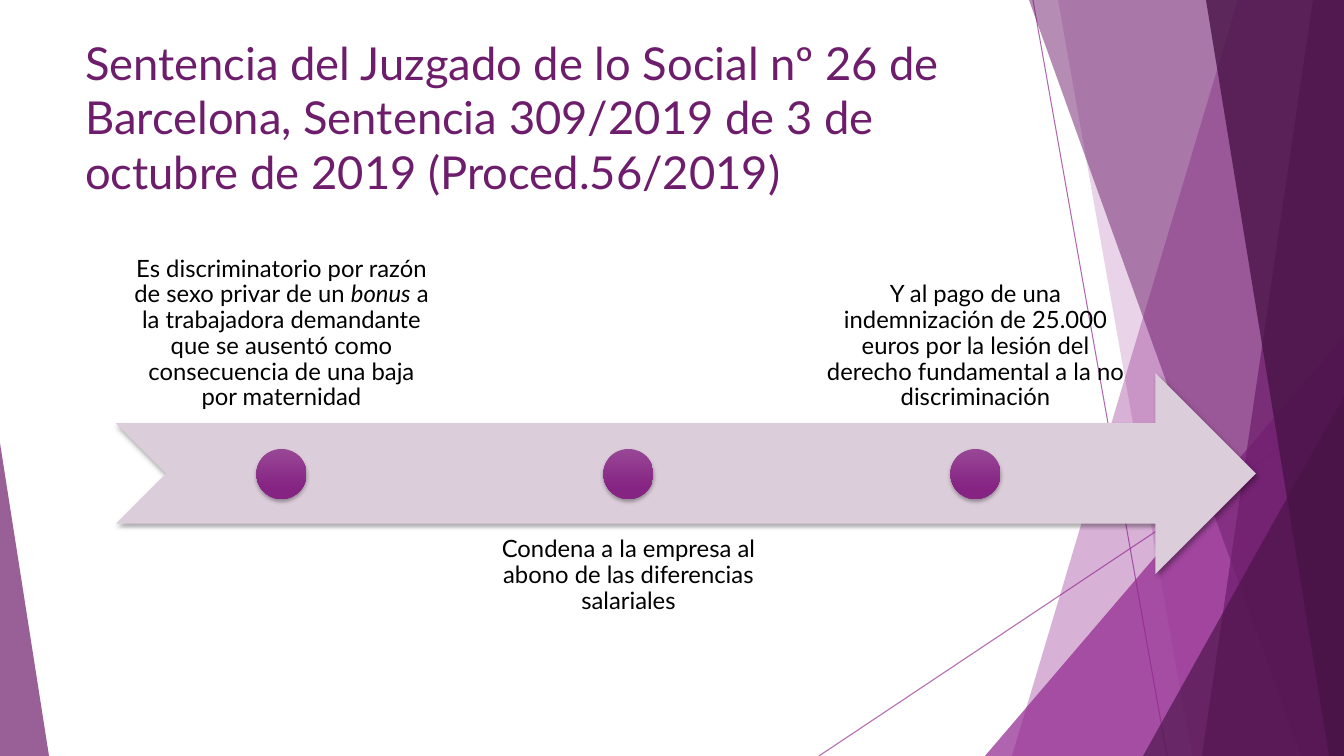
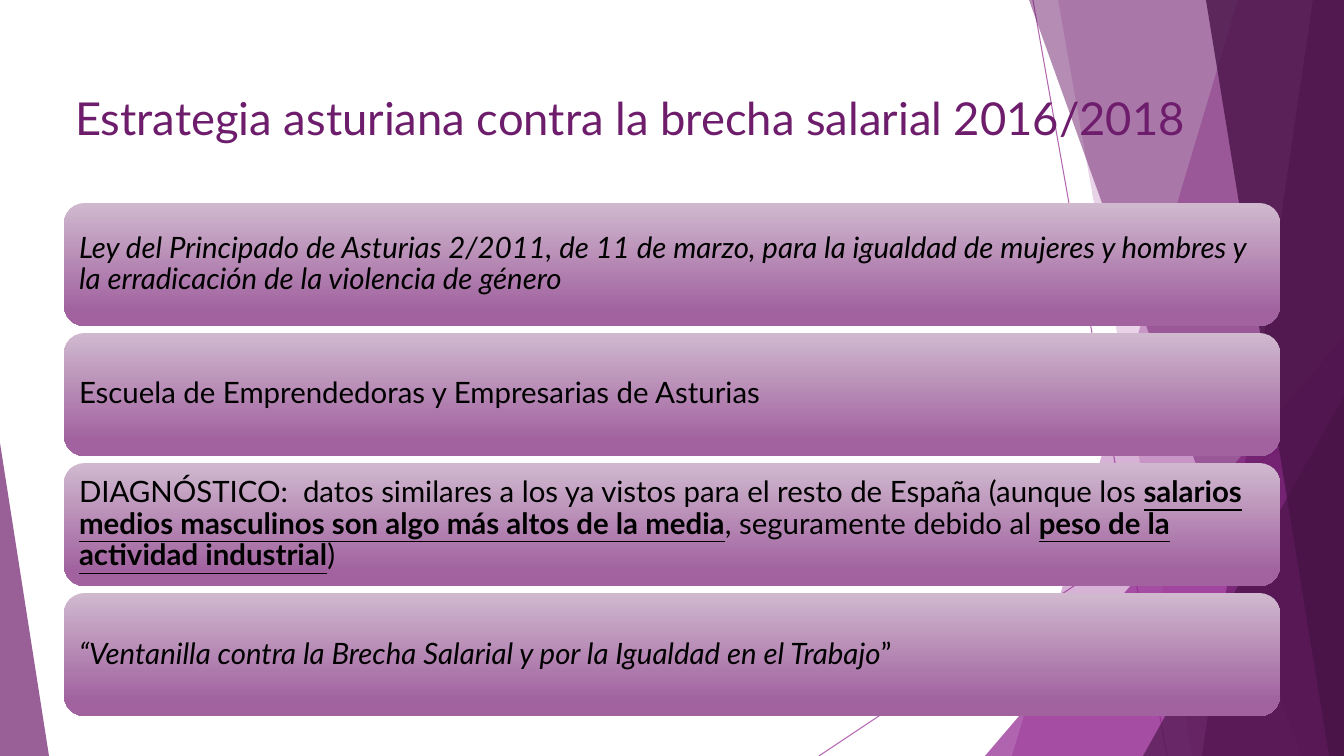
from lxml import etree
from pptx import Presentation
from pptx import util as u
from pptx.dml.color import RGBColor
from pptx.enum import shapes, text
from pptx.oxml import ns

WIDTH, HEIGHT = 1344, 756
PX = u.Inches(13.33333) / WIDTH
FONT = "Lato"

BLACK = RGBColor(0x00, 0x00, 0x00)
MAGENTA = RGBColor(0x92, 0x27, 0x8F)
PURPLE = RGBColor(0x6D, 0x1D, 0x6B)
DARK_PURPLE = RGBColor(0x49, 0x14, 0x47)
PALE_LILAC = RGBColor(0xDC, 0xCD, 0xDB)
DOT_GRADIENT = [(0, RGBColor(0x98, 0x47, 0x96)), (0.78, RGBColor(0x86, 0x24, 0x83))]
PANEL_GRADIENT = [(0, RGBColor(0xD0, 0xB9, 0xCF)), (0.88, RGBColor(0xA1, 0x62, 0x9F))]

ITALIC = {"italic": True}
STRESSED = {"bold": True, "underline": True}
LEFT, CENTER = text.PP_ALIGN.LEFT, text.PP_ALIGN.CENTER
TOP, MIDDLE, BOTTOM = (text.MSO_ANCHOR.TOP, text.MSO_ANCHOR.MIDDLE,
                       text.MSO_ANCHOR.BOTTOM)
PRESET = shapes.MSO_SHAPE


def px(*lengths):
    return [u.Emu(round(length * PX)) for length in lengths]


def set_all(target, values):
    for name, value in values.items():
        setattr(target, name, value)


def add_xml(parent, tag, **attributes):
    values = {name: str(value) for name, value in attributes.items()}
    return etree.SubElement(parent, ns.qn(tag), values)


def set_opacity(shape, percent):
    for color in shape.element.iter(ns.qn("a:srgbClr")):
        add_xml(color, "a:alpha", val=percent * 1000)


class Deck:
    def __init__(self):
        self.presentation = Presentation()
        set_all(self.presentation, dict(zip(("slide_width", "slide_height"),
                                            px(WIDTH, HEIGHT))))
        self.layout = self.presentation.slide_layouts[5]
        self.slide = None

    def start_slide(self, title, box):
        self.slide = self.presentation.slides.add_slide(self.layout)
        placeholder = self.slide.shapes.title
        set_all(placeholder, dict(zip(("left", "top", "width", "height"), px(*box))))
        self.set_text(placeholder, [(title, {})], 32.4, PURPLE, spacing=1.0)

    def set_text(self, shape, runs, size, color=BLACK, anchor=TOP, align=LEFT,
                 spacing=0.9, inset=None):
        """Fill a shape with one paragraph of (text, font values) runs."""
        frame = shape.text_frame
        set_all(frame, {"word_wrap": True, "vertical_anchor": anchor,
                        "auto_size": text.MSO_AUTO_SIZE.NONE})
        if inset is not None:
            sides = ("left", "top", "right", "bottom")
            set_all(frame, {f"margin_{side}": px(inset)[0] for side in sides})
        paragraph = frame.paragraphs[0]
        set_all(paragraph, {"alignment": align, "line_spacing": spacing})
        for words, values in runs:
            run = paragraph.add_run()
            run.text = words
            set_all(run.font, {"name": FONT, "size": u.Pt(size), **values})
            run.font.color.rgb = color

    def paint(self, shape, fill, opacity=100, shadow=False):
        """Fill with a color, or with a list of gradient stops from top to bottom."""
        shape.line.fill.background()
        shape.shadow.inherit = False
        if isinstance(fill, list):
            shape.fill.gradient()
            shape.fill.gradient_angle = 270
            for stop, (position, color) in zip(shape.fill.gradient_stops, fill):
                stop.position = position
                stop.color.rgb = color
        else:
            shape.fill.solid()
            shape.fill.fore_color.rgb = fill
        if opacity < 100:
            set_opacity(shape, opacity)
        if shadow:
            effects = shape.element.spPr.find(ns.qn("a:effectLst"))
            outer = add_xml(effects, "a:outerShdw", blurRad=u.Pt(3), dist=u.Pt(2),
                            dir=90 * 60000, rotWithShape=0)
            add_xml(add_xml(outer, "a:srgbClr", val=BLACK), "a:alpha", val=35000)
        return shape

    def preset(self, kind, box, fill, **paint_values):
        shape = self.slide.shapes.add_shape(kind, *px(*box))
        return self.paint(shape, fill, **paint_values)

    def triangle(self, box, apex, fill, opacity):
        shape = self.preset(PRESET.ISOSCELES_TRIANGLE, box, fill, opacity=opacity)
        shape.adjustments[0] = apex
        return shape

    def shard(self, top_x, bottom_x, fill, opacity):
        """Full-height band from a slanted edge to the right side of the slide."""
        builder = self.slide.shapes.build_freeform(top_x, 0, scale=PX)
        builder.add_line_segments([(WIDTH, 0), (WIDTH, HEIGHT), (bottom_x, HEIGHT)])
        return self.paint(builder.convert_to_shape(), fill, opacity)

    def thin_line(self, *ends):
        line = self.slide.shapes.add_connector(shapes.MSO_CONNECTOR.STRAIGHT, *px(*ends))
        line.line.width = u.Pt(0.75)
        line.line.color.rgb = MAGENTA
        set_opacity(line, 70)
        add_xml(line.element.spPr, "a:effectLst")
        return line

    def caption(self, box, runs, **text_values):
        shape = self.slide.shapes.add_textbox(*px(*box))
        self.set_text(shape, runs, 17, align=CENTER, inset=13, **text_values)

    def panel(self, box, runs):
        shape = self.preset(PRESET.ROUNDED_RECTANGLE, box, PANEL_GRADIENT)
        self.set_text(shape, runs, 21, anchor=MIDDLE, inset=9)

    def draw_background(self):
        """Draw the facets and move them to the layout that all slides share."""
        facets = [
            self.thin_line(1033, 0, 1167, HEIGHT),
            self.thin_line(WIDTH, 406, 819, HEIGHT),
            self.shard(1238, 1012, MAGENTA, 36),
            self.shard(1058, 1192, MAGENTA, 20),
            self.triangle((985, 336, 359, 420), 1, MAGENTA, 72),
            self.shard(1029, 1301, PURPLE, 50),
            self.shard(1313, 1202, PURPLE, 70),
            self.shard(1206, 1329, DARK_PURPLE, 80),
            self.triangle((1143, 396, 201, 360), 1, DARK_PURPLE, 66),
            self.triangle((0, 443, 49, 313), 0, PURPLE, 70),
        ]
        tree = self.layout.shapes.element
        for facet in facets:
            tree.append(facet.element)
        for number, properties in enumerate(tree.iter(ns.qn("p:cNvPr")), start=1):
            properties.set("id", str(number))


def add_ruling_slide(deck):
    deck.start_slide("Sentencia del Juzgado de lo Social nº 26 de Barcelona, "
                     "Sentencia 309/2019 de 3 de octubre de 2019 (Proced.56/2019)",
                     (75, 30, 948, 183))
    deck.draw_background()
    deck.preset(PRESET.NOTCHED_RIGHT_ARROW, (116, 373, 1140, 201), PALE_LILAC, shadow=True)
    steps = [
        [("Es discriminatorio por razón de sexo privar de un ", {}),
         ("bonus", ITALIC),
         (" a la trabajadora demandante que se ausentó como consecuencia "
          "de una baja por maternidad", {})],
        [("Condena a la empresa al abono de las diferencias salariales", {})],
        [("Y al pago de una indemnización de 25.000 euros por la lesión "
          "del derecho fundamental a la no discriminación", {})],
    ]
    width, pitch, dot = 331, 347, 50
    for index, runs in enumerate(steps):
        left = 116 + index * pitch
        top, anchor = (524, TOP) if index % 2 else (223, BOTTOM)
        deck.caption((left, top, width, 201), runs, anchor=anchor)
        deck.preset(PRESET.OVAL, (left + (width - dot) / 2, 449, dot, dot),
                    DOT_GRADIENT, shadow=True)


def add_strategy_slide(deck):
    deck.start_slide("Estrategia asturiana contra la brecha salarial 2016/2018",
                     (65, 85, 1216, 59))
    measures = [
        [("Ley del Principado de Asturias 2/2011, de 11 de marzo, para la igualdad "
          "de mujeres y hombres y la erradicación de la violencia de género", ITALIC)],
        [("Escuela de Emprendedoras y Empresarias de Asturias", {})],
        [("DIAGNÓSTICO:  datos similares a los ya vistos para el resto de España "
          "(aunque los ", {}),
         ("salarios medios masculinos son algo más altos de la media", STRESSED),
         (", seguramente debido al ", {}),
         ("peso de la actividad industrial", STRESSED),
         (")", {})],
        [("“Ventanilla contra la Brecha Salarial y por la Igualdad en el Trabajo", ITALIC),
         ("”", {})],
    ]
    for index, runs in enumerate(measures):
        deck.panel((64, 203 + index * 130, 1216, 123), runs)


def main():
    deck = Deck()
    add_ruling_slide(deck)
    add_strategy_slide(deck)
    deck.presentation.save("out.pptx")


if __name__ == "__main__":
    main()
